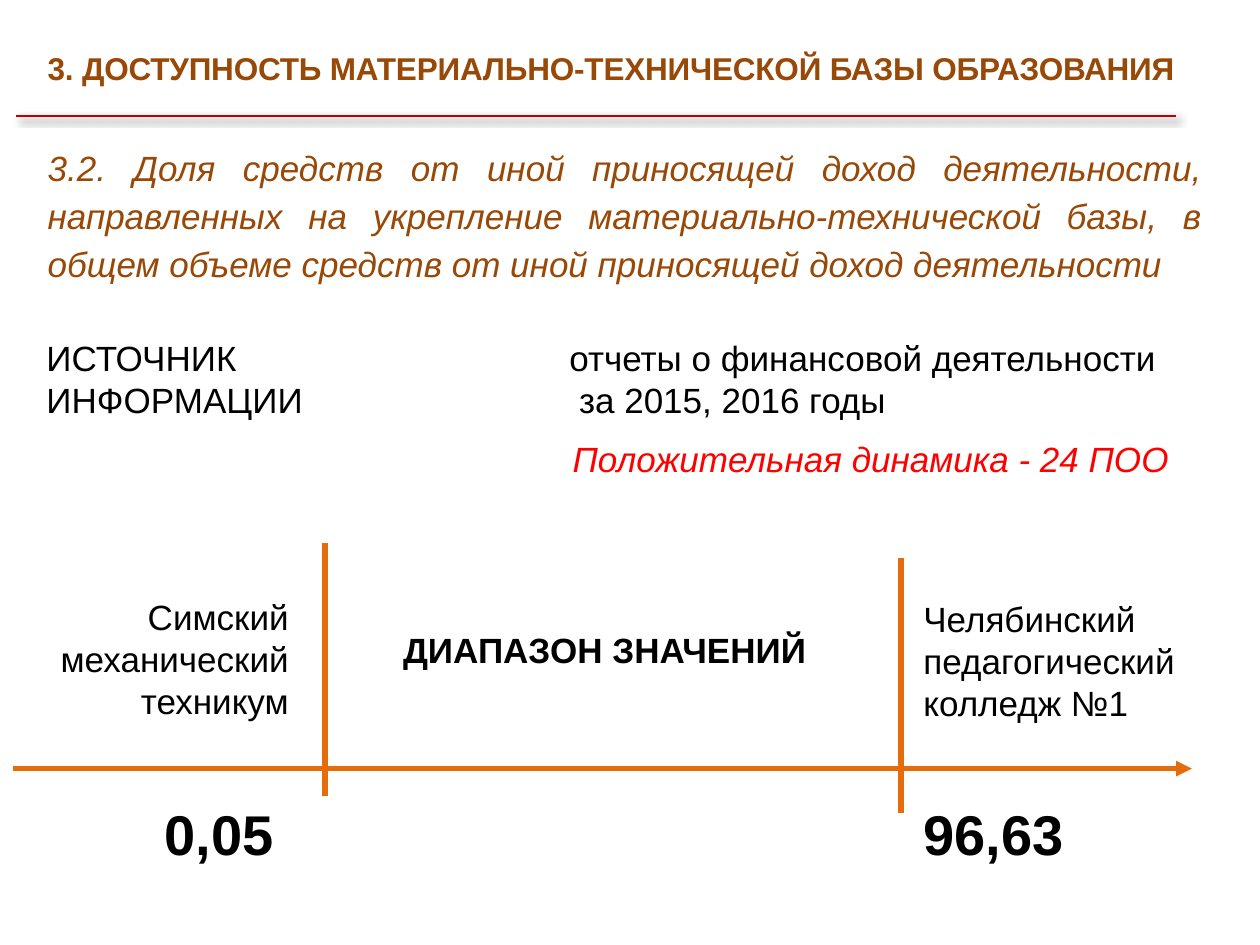
from pptx import Presentation
from pptx.dml.color import RGBColor
from pptx.enum.shapes import MSO_CONNECTOR, MSO_SHAPE
from pptx.enum.text import MSO_ANCHOR, MSO_AUTO_SIZE, PP_ALIGN
from pptx.oxml.ns import qn
from pptx.util import Inches, Pt
from lxml import etree

BROWN = RGBColor(0x98, 0x48, 0x07)
DARK_RED = RGBColor(0xC0, 0x00, 0x00)
ORANGE = RGBColor(0xE4, 0x6C, 0x0A)
BLACK = RGBColor(0x00, 0x00, 0x00)
RED = RGBColor(0xFF, 0x00, 0x00)
WHITE = RGBColor(0xFF, 0xFF, 0xFF)

STRAIGHT = MSO_CONNECTOR.STRAIGHT
RECTANGLE = MSO_SHAPE.RECTANGLE
TOP, MIDDLE = MSO_ANCHOR.TOP, MSO_ANCHOR.MIDDLE
FIT_SHAPE = MSO_AUTO_SIZE.SHAPE_TO_FIT_TEXT
LEFT, CENTER, RIGHT = PP_ALIGN.LEFT, PP_ALIGN.CENTER, PP_ALIGN.RIGHT
JUSTIFY = PP_ALIGN.JUSTIFY

FONT = "Arial"
AXIS_Y = 6.1
VALUE_Y = 6.3


def write_text(shape, lines, size=20, color=BLACK, bold=False, italic=False,
               align=LEFT, spacing=None, tracking=None, wrap=True, anchor=TOP):
    """Fill a shape with one paragraph, its lines parted by line breaks."""
    frame = shape.text_frame
    frame.word_wrap = wrap
    frame.auto_size = FIT_SHAPE
    frame.vertical_anchor = anchor
    paragraph = frame.paragraphs[0]
    paragraph.alignment = align
    if spacing:
        paragraph.line_spacing = spacing
    for index, line in enumerate(lines):
        if index:
            paragraph.add_line_break()
        run = paragraph.add_run()
        run.text = line
        run.font.name = FONT
        run.font.size = Pt(size)
        run.font.bold = bold
        run.font.italic = italic
        run.font.color.rgb = color
        if tracking:
            run.font._element.set("spc", str(tracking))


def add_text(slide, left, top, width, height, *lines, **style):
    box = slide.shapes.add_textbox(
        Inches(left), Inches(top), Inches(width), Inches(height))
    write_text(box, lines, **style)


def add_callout(slide, left, top, width, height, *lines, **style):
    callout = slide.shapes.add_shape(
        RECTANGLE, Inches(left), Inches(top), Inches(width), Inches(height))
    callout.shadow.inherit = False
    callout.fill.solid()
    callout.fill.fore_color.rgb = WHITE
    callout.line.fill.background()
    write_text(callout, lines, anchor=MIDDLE, **style)


def add_line(slide, x1, y1, x2, y2, color=ORANGE, width=3,
             arrow=False, shadow=False):
    line = slide.shapes.add_connector(
        STRAIGHT, Inches(x1), Inches(y1), Inches(x2), Inches(y2))
    line.line.color.rgb = color
    line.line.width = Pt(width)
    properties = line._element.spPr
    if arrow:
        etree.SubElement(properties.find(qn("a:ln")), qn("a:tailEnd"),
                         type="triangle")
    effects = etree.SubElement(properties, qn("a:effectLst"))
    if shadow:
        outer = etree.SubElement(
            effects, qn("a:outerShdw"), blurRad=str(Pt(4)), dist=str(Pt(3)),
            dir=str(45 * 60000), algn="tl", rotWithShape="0")
        tint = etree.SubElement(outer, qn("a:srgbClr"), val=str(BLACK))
        etree.SubElement(tint, qn("a:alpha"), val="40000")


def add_heading(slide):
    add_line(slide, 0.13, 0.92, 9.33, 0.92, DARK_RED, 1.5, shadow=True)
    add_text(slide, 0.28, 0.34, 9.36, 0.4,
             "3. ДОСТУПНОСТЬ МАТЕРИАЛЬНО-ТЕХНИЧЕСКОЙ БАЗЫ ОБРАЗОВАНИЯ",
             size=18, color=BROWN, bold=True, tracking=-10)
    add_text(slide, 0.28, 1.06, 9.36, 1.26,
             "3.2. Доля средств от иной приносящей доход деятельности, "
             "направленных на укрепление материально-технической базы, "
             "в общем объеме средств от иной приносящей доход деятельности",
             color=BROWN, italic=True, align=JUSTIFY, spacing=1.15)


def add_information_source(slide):
    add_text(slide, 4.42, 2.62, 4.91, 0.77,
             "отчеты о финансовой деятельности", " за 2015, 2016 годы",
             wrap=False)
    add_text(slide, 0.27, 2.62, 2.49, 0.77, "ИСТОЧНИК ИНФОРМАЦИИ")


def add_value_range(slide):
    # Lowest and highest values with their colleges
    add_text(slide, 1.21, VALUE_Y, 1.07, 0.64, "0,05",
             size=32, bold=True, wrap=False)
    add_text(slide, 0.1, 4.68, 2.29, 1.11,
             "Симский механический техникум", align=RIGHT)
    add_text(slide, 7.23, 4.69, 2.42, 1.11,
             "Челябинский педагогический колледж №1")
    add_text(slide, 7.23, VALUE_Y, 1.32, 0.64, "96,63",
             size=32, bold=True, wrap=False)
    add_text(slide, 3.1, 4.94, 6.22, 0.44, "ДИАПАЗОН ЗНАЧЕНИЙ", bold=True)

    # Range limits and axis
    for x, top, bottom in ((2.58, 4.31, 6.32), (7.15, 4.43, 6.45)):
        add_line(slide, x, top, x, bottom)
    add_line(slide, 0.1, AXIS_Y, 9.46, AXIS_Y, arrow=True)


def main():
    deck = Presentation()
    deck.slide_width, deck.slide_height = Inches(10), Inches(7.5)
    slide = deck.slides.add_slide(deck.slide_layouts[6])
    add_heading(slide)
    add_information_source(slide)
    add_value_range(slide)
    # Trend conclusion
    add_callout(slide, 4.44, 3.42, 5.02, 0.44,
                "Положительная динамика - 24 ПОО ",
                color=RED, italic=True, align=CENTER)
    deck.save("out.pptx")


if __name__ == "__main__":
    main()
